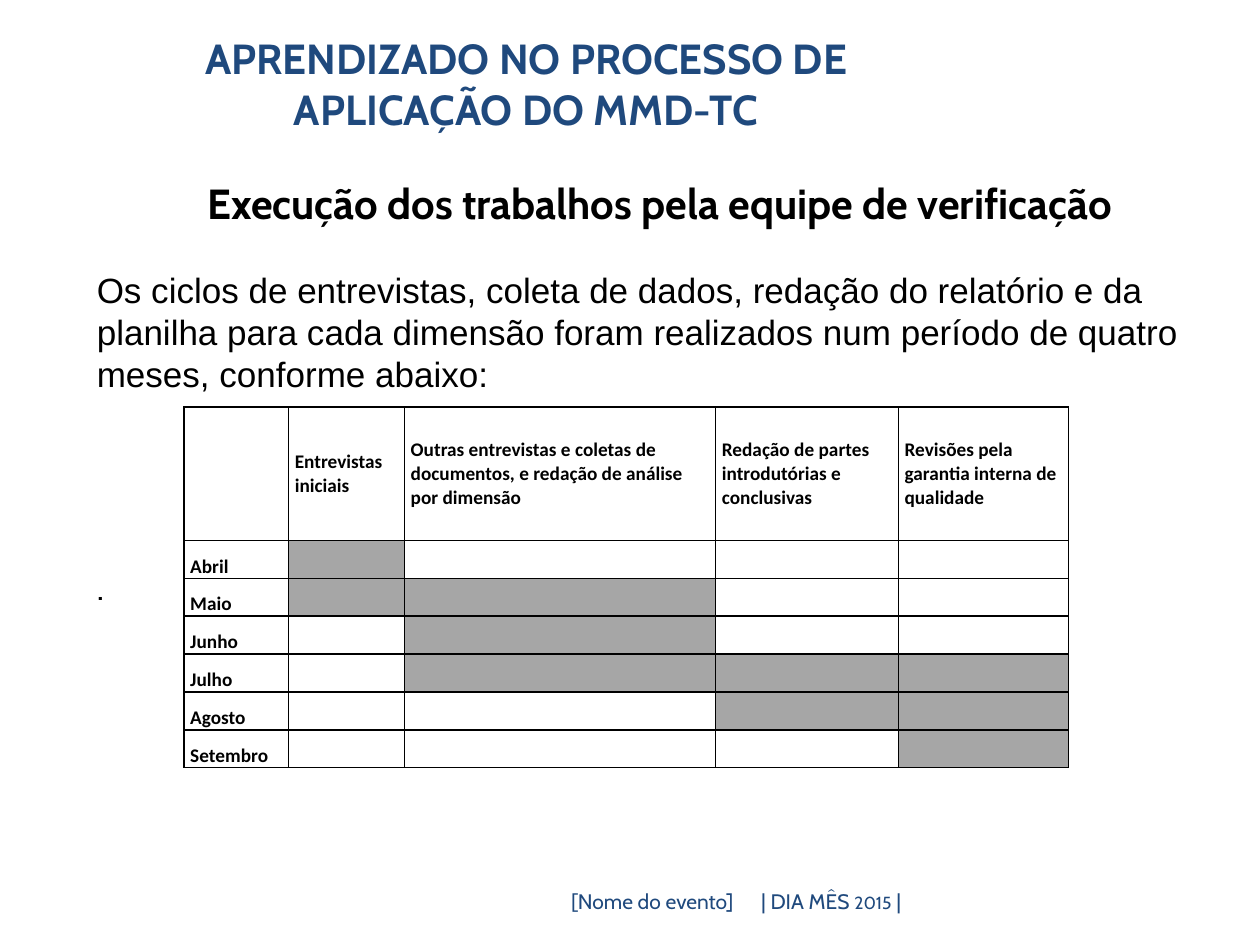
from pptx import Presentation
from pptx import util as u
from pptx.dml import color
from pptx.enum import text
from pptx.oxml import parse_xml
from pptx.oxml import ns

COLORS = {"navy": "1F497D", "black": "000000", "white": "FFFFFF", "gray": "A6A6A6"}
HEADERS = [
    "",
    "Entrevistas\viniciais",
    "Outras entrevistas e coletas de documentos, e redação de análise por dimensão",
    "Redação de partes introdutórias e conclusivas",
    "Revisões pela\vgarantia interna de qualidade",
]
SCHEDULE = [
    ("Abril", {1}),
    ("Maio", {1, 2}),
    ("Junho", {2}),
    ("Julho", {2, 3, 4}),
    ("Agosto", {3, 4}),
    ("Setembro", {4}),
]
COLUMN_WIDTHS = [0.83, 0.92, 2.47, 1.45, 1.35]
HEADER_HEIGHT, MONTH_HEIGHT = 1.06, 0.3


def rgb(name):
    """Return the named colour."""
    return color.RGBColor.from_string(COLORS[name])


def inches(box):
    """Turn a box of numbers into lengths."""
    return [u.Inches(value) for value in box]


def style(para, size, face, tint="black", bold=False, align=text.PP_ALIGN.LEFT):
    """Set the font and alignment of a paragraph."""
    para.alignment = align
    para.font.size = u.Pt(size)
    para.font.name = face
    para.font.bold = bold
    para.font.color.rgb = rgb(tint)


def add_text_frame(page, box):
    """Add a wrapping text box and return its frame."""
    frame = page.shapes.add_textbox(*inches(box)).text_frame
    frame.word_wrap = True
    return frame


def place_title(page, box):
    """Move and format the title placeholder."""
    title = page.shapes.title
    title.left, title.top, title.width, title.height = inches(box)
    frame = title.text_frame
    frame.text = "APRENDIZADO NO PROCESSO DE APLICAÇÃO DO MMD-TC"
    frame.auto_size = text.MSO_AUTO_SIZE.NONE
    frame.vertical_anchor = text.MSO_ANCHOR.TOP
    style(frame.paragraphs[0], 24, "Cabin", "navy", True, text.PP_ALIGN.CENTER)


def add_body(page, box):
    """Add the subtitle, the introduction and the closing mark."""
    frame = add_text_frame(page, box)
    heading = frame.paragraphs[0]
    heading.text = "Execução dos trabalhos pela equipe de verificação"
    style(heading, 24, "Cabin", bold=True, align=text.PP_ALIGN.CENTER)
    intro = frame.add_paragraph()
    intro.text = (
        "Os ciclos de entrevistas, coleta de dados, redação do relatório e da planilha "
        "para cada dimensão foram realizados num período de quatro meses, conforme abaixo:"
    )
    intro.space_before = u.Pt(23)
    style(intro, 20, "Arial")
    mark = frame.add_paragraph()
    mark.text = "."
    mark.space_before = u.Pt(98)
    style(mark, 20, "Cabin", align=text.PP_ALIGN.JUSTIFY)


def add_borders(cell):
    """Draw a thin black line on each side of a cell."""
    for side in ("lnL", "lnR", "lnT", "lnB"):
        cell._tc.get_or_add_tcPr().append(parse_xml(
            f'<a:{side} {ns.nsdecls("a")} w="12700"><a:solidFill>'
            f'<a:srgbClr val="{COLORS["black"]}"/></a:solidFill></a:{side}>'
        ))


def fill_cell(cell, label, anchor, tint):
    """Write and format one cell."""
    cell.margin_left = cell.margin_right = u.Inches(0.05)
    cell.margin_top = cell.margin_bottom = 0
    cell.vertical_anchor = anchor
    add_borders(cell)
    cell.fill.solid()
    cell.fill.fore_color.rgb = rgb(tint)
    if label:
        para = cell.text_frame.paragraphs[0]
        para.text = label
        style(para, 11, "Calibri", bold=True)


def add_schedule(page, box):
    """Add the table of months and activities."""
    frame = page.shapes.add_table(len(SCHEDULE) + 1, len(HEADERS), *inches(box))
    table = frame.table
    table.first_row = table.horz_banding = False
    for column, width in zip(table.columns, COLUMN_WIDTHS):
        column.width = u.Inches(width)
    for index, row in enumerate(table.rows):
        row.height = u.Inches(MONTH_HEIGHT if index else HEADER_HEIGHT)
    for column, label in enumerate(HEADERS):
        fill_cell(table.cell(0, column), label, text.MSO_ANCHOR.MIDDLE, "white")
    for row, (month, active) in enumerate(SCHEDULE, 1):
        for column in range(len(HEADERS)):
            fill_cell(
                table.cell(row, column),
                "" if column else month,
                text.MSO_ANCHOR.BOTTOM,
                "gray" if column in active else "white",
            )


def add_footer(page, box, spans):
    """Add a right-aligned footer made of (text, size) spans."""
    frame = add_text_frame(page, box)
    frame.vertical_anchor = text.MSO_ANCHOR.MIDDLE
    para = frame.paragraphs[0]
    style(para, 12, "Cabin", "navy", align=text.PP_ALIGN.RIGHT)
    for words, size in spans:
        span = para.add_run()
        span.text = words
        span.font.size = u.Pt(size)


def main():
    """Build the slide and save the deck."""
    deck = Presentation()
    deck.slide_width, deck.slide_height = u.Inches(10), u.Inches(7.5)
    page = deck.slides.add_slide(deck.slide_layouts[5])
    add_footer(page, (5.67, 7, 1.58, 0.3), [("| DIA MÊS ", 12), ("2015", 10), (" |", 12)])
    add_footer(page, (0.75, 7, 5.17, 0.3), [("[Nome do evento]", 12)])
    add_body(page, (0.67, 1.36, 9.13, 4.34))
    place_title(page, (0.67, 0.21, 7.01, 0.91))
    add_schedule(page, (1.46, 3.23, 7.02, 2.86))
    deck.save("out.pptx")


if __name__ == "__main__":
    main()
